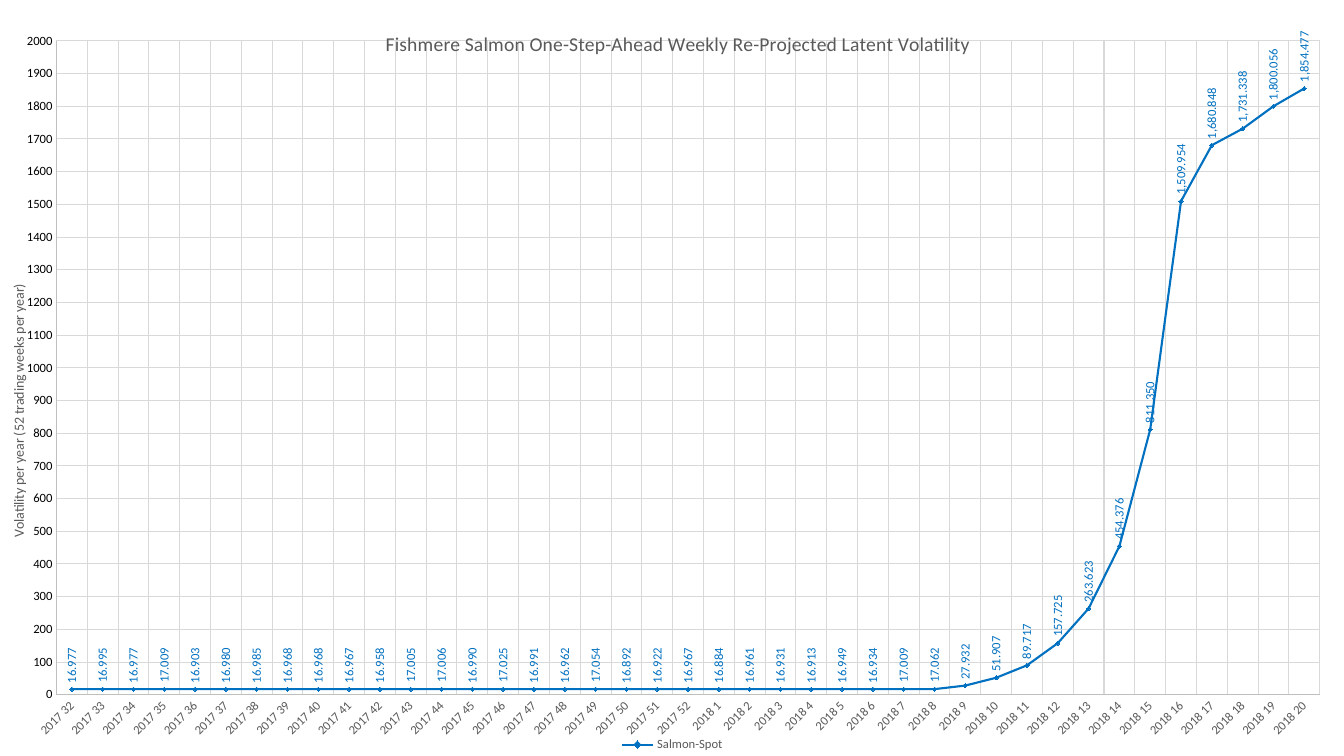
"""Build a slide with a line chart of weekly salmon volatility."""
from dataclasses import dataclass

import pptx
import pptx.chart.data
import pptx.dml.color
import pptx.enum.chart
import pptx.oxml
import pptx.oxml.ns
import pptx.util


@dataclass(frozen=True)
class Theme:
    font: str = "Calibri"
    series: str = "0070C0"
    text: str = "595959"
    values: str = "000000"
    axis: str = "BFBFBF"
    grid: str = "D9D9D9"
    title_size: float = 14
    axis_title_size: float = 10
    label_size: float = 9


THEME = Theme()
SLIDE_WIDTH, SLIDE_HEIGHT = 960, 540
WEEKS = [f"2017 {week}" for week in range(32, 53)] + [f"2018 {week}" for week in range(1, 21)]
VOLATILITY = [
    16.977, 16.995, 16.977, 17.009, 16.903, 16.980, 16.985, 16.968, 16.968, 16.967,
    16.958, 17.005, 17.006, 16.990, 17.025, 16.991, 16.962, 17.054, 16.892, 16.922,
    16.967, 16.884, 16.961, 16.931, 16.913, 16.949, 16.934, 17.009, 17.062, 27.932,
    51.907, 89.717, 157.725, 263.623, 454.376, 811.350, 1509.954, 1680.848, 1731.338,
    1800.056, 1854.477,
]


def rgb(color):
    return pptx.dml.color.RGBColor.from_string(color)


def style_font(font, size=THEME.label_size, color=THEME.text):
    font.name = THEME.font
    font.size = pptx.util.Pt(size)
    font.bold = False
    font.color.rgb = rgb(color)


def style_line(line, color, width=0.75):
    line.color.rgb = rgb(color)
    line.width = pptx.util.Pt(width)


def rotate_text(element, degrees):
    for body in element.xpath("./c:txPr/a:bodyPr | ./c:tx/c:rich/a:bodyPr"):
        body.set("rot", str(degrees * 60000))
        body.set("vert", "horz")


def place(element, index, **settings):
    """Give a chart part a manual layout, in points on the slide."""
    for layout in element.xpath("./c:layout"):
        element.remove(layout)
    scale = {"x": SLIDE_WIDTH, "y": SLIDE_HEIGHT, "w": SLIDE_WIDTH, "h": SLIDE_HEIGHT}
    fields = "<c:layoutTarget val='inner'/>" if "w" in settings else ""
    fields += "<c:xMode val='edge'/><c:yMode val='edge'/>"
    fields += "".join(f"<c:{key} val='{value / scale[key]:.4f}'/>" for key, value in settings.items())
    namespace = pptx.oxml.ns.nsdecls("c")
    element.insert(index, pptx.oxml.parse_xml(
        f"<c:layout {namespace}><c:manualLayout>{fields}</c:manualLayout></c:layout>"))


def write_title(title, text, size, x, y, degrees=0):
    paragraph = title.text_frame.paragraphs[0]
    run = paragraph.add_run()
    run.text = text
    style_font(run.font, size)
    element = title._element
    rotate_text(element, degrees)
    place(element, 1, x=x, y=y)
    for overlay in element.xpath("./c:overlay"):
        overlay.set("val", "1")


def style_axis(axis, color, degrees=0):
    axis.major_tick_mark = axis.minor_tick_mark = pptx.enum.chart.XL_TICK_MARK.NONE
    axis.has_major_gridlines = True
    style_line(axis.major_gridlines.format.line, THEME.grid)
    style_line(axis.format.line, THEME.axis)
    style_font(axis.tick_labels.font, color=color)
    rotate_text(axis._element, degrees)


def style_series(series):
    series.smooth = False
    style_line(series.format.line, THEME.series, 1.5)
    marker = series.marker
    marker.style = pptx.enum.chart.XL_MARKER_STYLE.DIAMOND
    marker.size = 3
    marker.format.fill.solid()
    marker.format.fill.fore_color.rgb = rgb(THEME.series)
    style_line(marker.format.line, THEME.series)
    labels = series.data_labels
    labels.show_value = True
    labels.number_format = "#,##0.000"
    labels.number_format_is_linked = False
    labels.position = pptx.enum.chart.XL_LABEL_POSITION.ABOVE
    style_font(labels.font, color=THEME.series)
    rotate_text(labels._element, -90)


def add_volatility_chart(slide):
    volatility = pptx.chart.data.CategoryChartData()
    volatility.categories = WEEKS
    volatility.add_series("Salmon-Spot", VOLATILITY)
    chart = slide.shapes.add_chart(
        pptx.enum.chart.XL_CHART_TYPE.LINE_MARKERS, 0, 0,
        pptx.util.Pt(SLIDE_WIDTH), pptx.util.Pt(SLIDE_HEIGHT), volatility).chart
    style_font(chart.font, THEME.axis_title_size, THEME.values)
    chart.plots[0].vary_by_categories = False
    style_series(chart.plots[0].series[0])

    style_axis(chart.category_axis, THEME.text, -45)
    value_axis = chart.value_axis
    style_axis(value_axis, THEME.values)
    value_axis.minimum_scale, value_axis.maximum_scale = 0, 2000
    value_axis.major_unit = 100
    value_axis.tick_labels.number_format = "General"
    value_axis.tick_labels.number_format_is_linked = False

    write_title(chart.chart_title, "Fishmere Salmon One-Step-Ahead Weekly Re-Projected Latent Volatility",
                THEME.title_size, x=273, y=19)
    write_title(value_axis.axis_title, "Volatility per year (52 trading weeks per year)",
                THEME.axis_title_size, x=5, y=201, degrees=-90)
    chart.has_legend = True
    chart.legend.position = pptx.enum.chart.XL_LEGEND_POSITION.BOTTOM
    chart.legend.include_in_layout = False
    style_font(chart.legend.font)
    place(chart._chartSpace.xpath("./c:chart/c:plotArea")[0], 0, x=40.3, y=29.2, w=902.4, h=467.1)


def main():
    deck = pptx.Presentation()
    deck.slide_width = pptx.util.Pt(SLIDE_WIDTH)
    deck.slide_height = pptx.util.Pt(SLIDE_HEIGHT)
    add_volatility_chart(deck.slides.add_slide(deck.slide_layouts[6]))
    deck.save("out.pptx")


if __name__ == "__main__":
    main()
